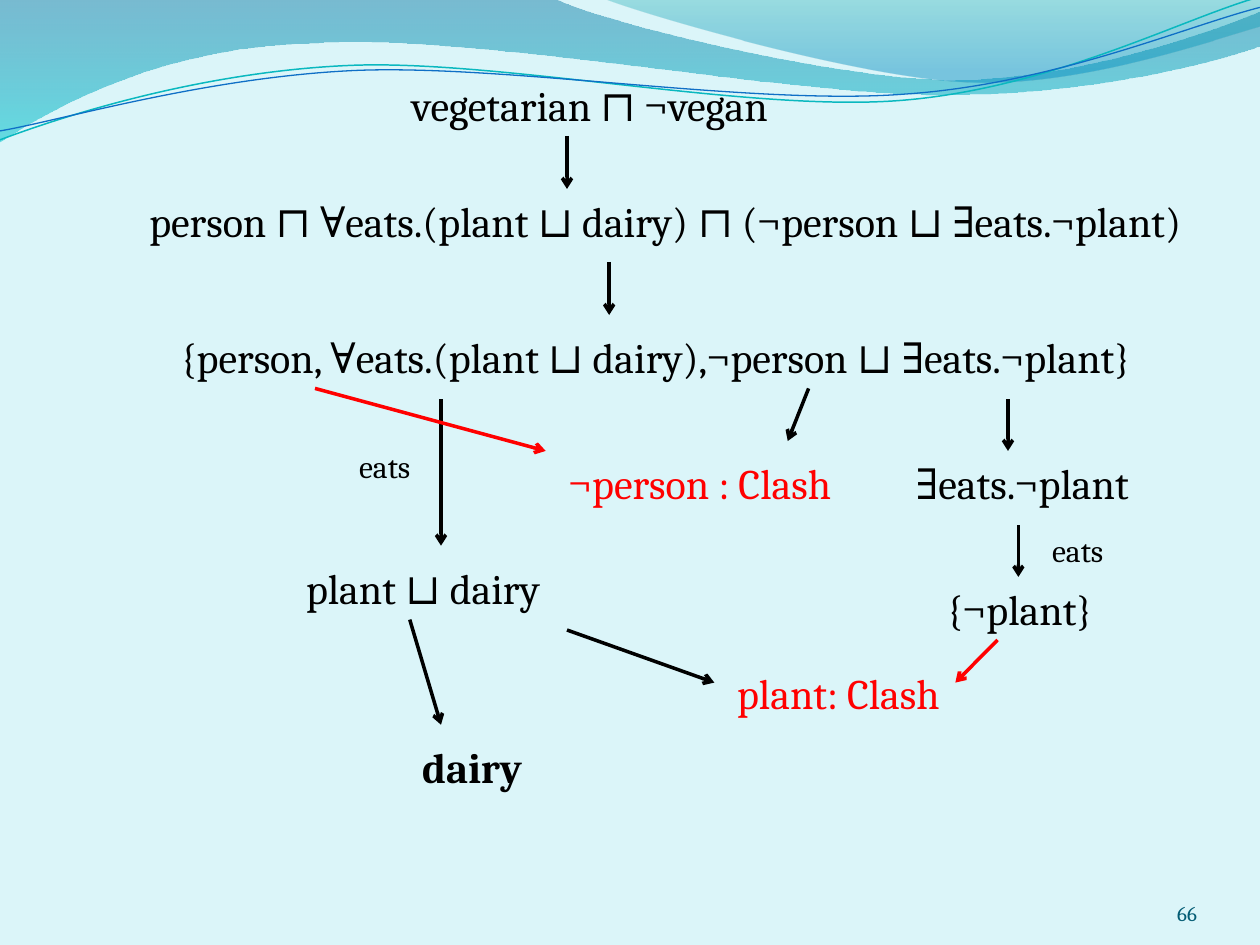
from lxml.etree import SubElement
from pptx import Presentation
from pptx.dml.color import RGBColor
from pptx.enum.shapes import MSO_CONNECTOR
from pptx.enum.text import MSO_ANCHOR, MSO_AUTO_SIZE, PP_ALIGN
from pptx.oxml.ns import qn
from pptx.util import Cm, Pt

BLACK = RGBColor(0x00, 0x00, 0x00)
RED = RGBColor(0xFF, 0x00, 0x00)
PALE_AQUA = RGBColor(0xDB, 0xF5, 0xF9)
PAGE_TEAL = RGBColor(0x04, 0x5D, 0x75)
DEEP_BLUE = RGBColor(0x00, 0x74, 0xA1)
CYAN = RGBColor(0x00, 0xC6, 0xCF)
SEA_GREEN = RGBColor(0x00, 0xA1, 0xA9)
SKY_BLUE = RGBColor(0x00, 0x8B, 0xBF)
LINE_TEAL = RGBColor(0x0A, 0xB8, 0xBF)
LINE_BLUE = RGBColor(0x0F, 0x6F, 0xC6)
FONT = "Cambria"

WAVE_BANDS = [
    ([(0, 0), (11.18, -0.03),
      (12.09, 0.43, 16.87, 1.6, 19.25, 1.6),
      (21.67, 1.6, 24.33, 0.66, 25.4, 0.23), (25.43, 0.91),
      (24.97, 1.12, 22.1, 1.93, 18.95, 1.91),
      (15.8, 1.91, 9.7, 0.71, 6.53, 0.86),
      (3.28, 0.91, 1.17, 2.11, -0.03, 2.87)],
     [(0, DEEP_BLUE, 45), (1, CYAN, 55)]),
    ([(12.17, -0.03),
      (12.93, 0.28, 17.32, 1.57, 19.53, 1.65),
      (21.74, 1.75, 24.41, 0.81, 25.4, 0.53), (25.4, 0)],
     [(0, SEA_GREEN, 30), (0.8, SKY_BLUE, 45)]),
]
WAVE_LINES = [
    ([(0, 2.82), (1.22, 2.36, 4.01, 1.45, 7.04, 1.32),
      (10.03, 1.19, 15.06, 2.26, 18.11, 2.03),
      (21.16, 1.8, 23.83, 0.38, 25.35, -0.05)], LINE_TEAL, 0.85),
    ([(0, 2.64), (1.19, 2.44, 4.17, 1.55, 7.19, 1.42),
      (10.24, 1.3, 15.16, 2.13, 18.21, 1.9),
      (21.23, 1.7, 23.9, 0.53, 25.4, 0.15)], LINE_BLUE, 0.75),
]
INDENTED_EXPRESSIONS = [
    ("person ⊓ ∀eats.(plant ⊔ dairy) ⊓ (¬person ⊔ ∃eats.¬plant)", 0.02, 2.34, 23.29),
    ("{person, ∀eats.(plant ⊔ dairy),¬person ⊔ ∃eats.¬plant}", 0.65, 5.08, 22.43),
]
EXPRESSIONS = [
    ("vegetarian ⊓ ¬vegan", 6.58, 0, 8.18, BLACK),
    ("¬person : Clash", 9.75, 7.62, 6.2, RED),
    ("∃eats.¬plant", 16.74, 7.62, 5.28, BLACK),
    ("{¬plant}", 17.37, 10.16, 3.73, BLACK),
    ("plant ⊔ dairy", 4.45, 9.75, 5.51, BLACK),
    ("plant: Clash", 13.14, 11.87, 4.93, RED),
]
ROLE_LABELS = [(19.49, 9.12), (5.52, 7.42)]
STEPS = [
    (9.96, 1.27, 9.96, 2.34),
    (10.81, 3.81, 10.81, 4.88),
    (14.83, 6.36, 14.41, 7.42),
    (18.85, 6.58, 18.85, 7.62),
    (19.06, 9.12, 19.06, 10.16),
    (7.42, 6.58, 7.42, 9.53),
    (6.79, 11.02, 7.42, 13.14),
    (9.96, 11.23, 12.93, 12.29),
]
CLASHES = [(18.64, 11.43, 17.79, 12.29), (4.88, 6.36, 9.53, 7.62)]


def add_outline(slide, left, top, outline, close):
    """Add a freeform of straight and cubic segments relative to the given corner."""
    pairs = [(segment[i], segment[i + 1]) for segment in outline
             for i in range(0, len(segment), 2)]
    points = [(Cm(left + x), Cm(top + y)) for x, y in pairs]
    builder = slide.shapes.build_freeform(*points[0])
    builder.add_line_segments(points[1:], close=close)
    shape = builder.convert_to_shape()
    shape.shadow.inherit = False
    straight = iter(list(shape.element.iter(qn("a:lnTo"))))
    for segment in outline[1:]:
        first = next(straight)
        if len(segment) == 6:
            curve = first.makeelement(qn("a:cubicBezTo"))
            first.addprevious(curve)
            for part in (first, next(straight), next(straight)):
                curve.append(part[0])
                part.getparent().remove(part)
    return shape


def add_waves(slide, left, top):
    """Draw the translucent bands and thin lines of the header."""
    for outline, stops in WAVE_BANDS:
        band = add_outline(slide, left, top, outline, True)
        band.line.fill.background()
        band.fill.gradient()
        band.fill.gradient_angle = 270
        for stop, (position, color, _) in zip(band.fill.gradient_stops, stops):
            stop.position = position
            stop.color.rgb = color
        tints = band.element.iterfind(f".//{qn('a:gs')}/{qn('a:srgbClr')}")
        for tint, (_, _, opacity) in zip(tints, stops):
            SubElement(tint, qn("a:alpha"), val=str(opacity * 1000))
    for outline, color, width in WAVE_LINES:
        wave = add_outline(slide, left, top, outline, False)
        wave.fill.background()
        wave.line.color.rgb = color
        wave.line.width = Pt(width)


def add_text(slide, text, left, top, width, height=1.27, size=24, color=BLACK, bold=None):
    """Add a one-line text box and return it."""
    box = slide.shapes.add_textbox(Cm(left), Cm(top), Cm(width), Cm(height))
    box.text_frame.word_wrap = False
    box.text_frame.auto_size = MSO_AUTO_SIZE.SHAPE_TO_FIT_TEXT
    run = box.text_frame.paragraphs[0].add_run()
    run.text = text
    run.font.name = FONT
    run.font.size = Pt(size)
    run.font.bold = bold
    run.font.color.rgb = color
    return box


def add_arrow(slide, left, top, ends, color):
    """Add an open-headed arrow."""
    x1, y1, x2, y2 = ends
    arrow = slide.shapes.add_connector(
        MSO_CONNECTOR.STRAIGHT, Cm(left + x1), Cm(top + y1), Cm(left + x2), Cm(top + y2))
    arrow.line.color.rgb = color
    arrow.line.width = Pt(2)
    SubElement(arrow.line._get_or_add_ln(), qn("a:tailEnd"), type="arrow")
    SubElement(arrow.element.spPr, qn("a:effectLst"))


def add_tableau(slide, left, top):
    """Place the expressions and the arrows of the derivation."""
    for text, x, y, width in INDENTED_EXPRESSIONS:
        expression = add_text(slide, text, left + x, top + y, width)
        expression.text_frame.word_wrap = True
        paragraph = expression.text_frame.paragraphs[0]
        paragraph.level = 1
        paragraph._p.get_or_add_pPr().set("marL", str(Cm(1.27)))
    for text, x, y, width, color in EXPRESSIONS:
        add_text(slide, text, left + x, top + y, width, color=color)
    add_text(slide, "dairy", left + 6.79, top + 13.35, 2.79, bold=True)
    for x, y in ROLE_LABELS:
        add_text(slide, "eats", left + x, top + y, 1.6, 1.02, 18)
    for color, arrows in ((BLACK, STEPS), (RED, CLASHES)):
        for ends in arrows:
            add_arrow(slide, left, top, ends, color)


def add_page_number(slide, left, top, width, height):
    """Place the page number at the lower right of its box."""
    number = add_text(slide, "66", left, top, width, height, 12, PAGE_TEAL)
    frame = number.text_frame
    frame.word_wrap = True
    frame.auto_size = MSO_AUTO_SIZE.NONE
    frame.vertical_anchor = MSO_ANCHOR.BOTTOM
    frame.margin_left = frame.margin_top = frame.margin_right = frame.margin_bottom = 0
    frame.paragraphs[0].alignment = PP_ALIGN.RIGHT


def main():
    """Build the slide and save it."""
    deck = Presentation()
    deck.slide_width, deck.slide_height = Cm(25.4), Cm(19.05)
    slide = deck.slides.add_slide(deck.slide_layouts[6])
    slide.background.fill.solid()
    slide.background.fill.fore_color.rgb = PALE_AQUA
    add_waves(slide, 0, 0)
    add_page_number(slide, 22.02, 17.65, 2.11, 1.02)
    add_tableau(slide, 1.47, 1.47)
    deck.save("out.pptx")


if __name__ == "__main__":
    main()
